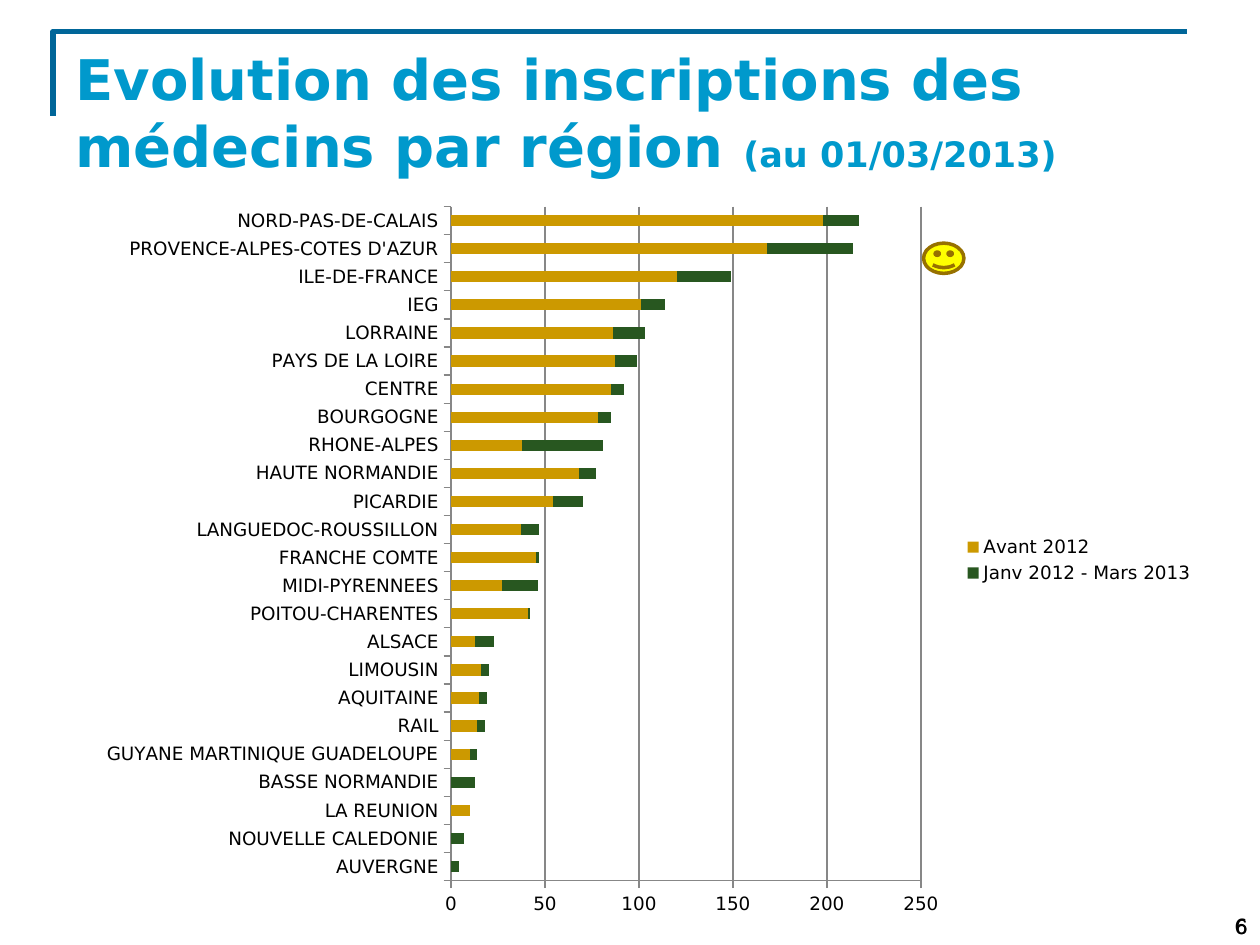
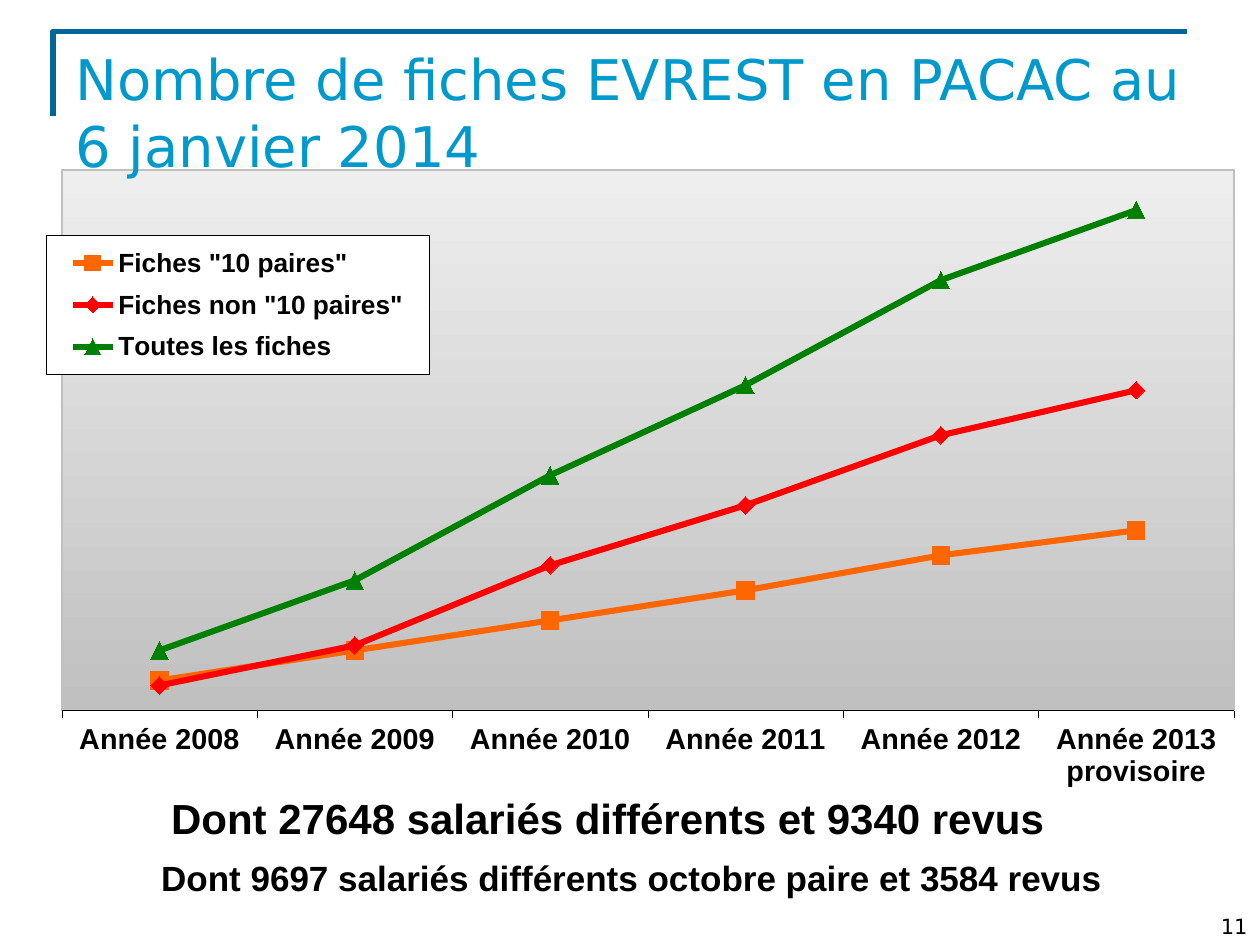
from lxml import etree
from pptx import Presentation
from pptx.chart.data import CategoryChartData
from pptx.dml.color import RGBColor
from pptx.enum.chart import (XL_CHART_TYPE, XL_LEGEND_POSITION,
                             XL_MARKER_STYLE, XL_TICK_MARK)
from pptx.enum.shapes import MSO_SHAPE
from pptx.enum.text import MSO_ANCHOR, PP_ALIGN
from pptx.oxml.ns import qn
from pptx.util import Pt

PX = 9144
BARS = XL_CHART_TYPE.BAR_STACKED
LINES = XL_CHART_TYPE.LINE_MARKERS
RIGHT = XL_LEGEND_POSITION.RIGHT
OUT, NONE = XL_TICK_MARK.OUTSIDE, XL_TICK_MARK.NONE
SQUARE = XL_MARKER_STYLE.SQUARE
DIAMOND = XL_MARKER_STYLE.DIAMOND
TRIANGLE = XL_MARKER_STYLE.TRIANGLE
SMILEY = MSO_SHAPE.SMILEY_FACE
TOP, BOTTOM = MSO_ANCHOR.TOP, MSO_ANCHOR.BOTTOM
LEFT, END = PP_ALIGN.LEFT, PP_ALIGN.RIGHT
SANS, ARIAL = "DejaVu Sans", "Arial"
BLACK, WHITE, GRAY, SILVER = "000000", "FFFFFF", "878787", "C0C0C0"
BLUE, NAVY = "0099CC", "006699"
NS = ('xmlns:c="http://schemas.openxmlformats.org/drawingml/2006/chart" '
      'xmlns:a="http://schemas.openxmlformats.org/drawingml/2006/main"')

REGIONS = [
    ("AUVERGNE", 0, 4), ("NOUVELLE CALEDONIE", 0, 7), ("LA REUNION", 10, 0),
    ("BASSE NORMANDIE", 0, 13), ("GUYANE MARTINIQUE GUADELOUPE", 10, 4),
    ("RAIL", 14, 4), ("AQUITAINE", 15, 4), ("LIMOUSIN", 16, 4),
    ("ALSACE", 13, 10), ("POITOU-CHARENTES", 41, 1),
    ("MIDI-PYRENNEES", 27, 19), ("FRANCHE COMTE", 45, 2),
    ("LANGUEDOC-ROUSSILLON", 37, 10), ("PICARDIE", 54, 16),
    ("HAUTE NORMANDIE", 68, 9), ("RHONE-ALPES", 38, 43),
    ("BOURGOGNE", 78, 7), ("CENTRE", 85, 7), ("PAYS DE LA LOIRE", 87, 12),
    ("LORRAINE", 86, 17), ("IEG", 101, 13), ("ILE-DE-FRANCE", 120, 29),
    ("PROVENCE-ALPES-COTES D'AZUR", 168, 46), ("NORD-PAS-DE-CALAIS", 198, 19),
]
YEARS = [f"Année {year}" for year in range(2008, 2013)]
YEARS.append("Année 2013 provisoire")
SHEETS = [
    ('Fiches "10 paires"', [6, 12, 18, 24, 31, 36], "FF6600", SQUARE),
    ('Fiches non "10 paires"', [5, 13, 29, 41, 55, 64], "FF0000", DIAMOND),
    ("Toutes les fiches", [12, 26, 47, 65, 86, 100], "008000", TRIANGLE),
]


def color(code):
    """Turn a hex string into a colour."""
    return RGBColor.from_string(code)


def style(font, face, size, code=BLACK, bold=False):
    """Set the format of a font."""
    font.name, font.size, font.bold = face, Pt(size), bold
    font.color.rgb = color(code)


def stroke(line, code, width):
    """Set the colour and width of a line."""
    line.color.rgb = color(code)
    line.width = Pt(width)


def place(box, frame, inner=False):
    """Make a chart layout that puts a part at a slide box."""
    left, top, wide, high = frame
    spots = {"x": (box[0] - left) / wide, "y": (box[1] - top) / high,
             "w": box[2] / wide, "h": box[3] / high}
    target = '<c:layoutTarget val="inner"/>' if inner else ""
    modes = "".join(f'<c:{k}Mode val="edge"/>' for k in "xy")
    sizes = "".join(f'<c:{k} val="{v:.4f}"/>' for k, v in spots.items())
    return etree.fromstring(
        f"<c:layout {NS}><c:manualLayout>{target}{modes}{sizes}"
        "</c:manualLayout></c:layout>")


def panel(fill, code, width):
    """Make the fill and border of a chart part."""
    return etree.fromstring(
        f'<c:spPr {NS}>{fill}<a:ln w="{Pt(width)}"><a:solidFill>'
        f'<a:srgbClr val="{code}"/></a:solidFill></a:ln></c:spPr>')


def solid(code):
    """Write a plain fill."""
    return f'<a:solidFill><a:srgbClr val="{code}"/></a:solidFill>'


def fade(*codes):
    """Write a fill that fades from top to bottom."""
    step = 100000 // (len(codes) - 1)
    stops = "".join(f'<a:gs pos="{i * step}"><a:srgbClr val="{code}"/></a:gs>'
                    for i, code in enumerate(codes))
    return (f"<a:gradFill><a:gsLst>{stops}</a:gsLst>"
            '<a:lin ang="5400000" scaled="0"/></a:gradFill>')


class Deck:
    """Hold the style and the current slide."""

    def __init__(self):
        """Start a deck of 10 by 7.5 inches."""
        self.file = Presentation()
        self.file.slide_width, self.file.slide_height = 1000 * PX, 750 * PX
        self.slide = None

    def page(self):
        """Add a slide with its corner rule."""
        self.slide = self.file.slides.add_slide(self.file.slide_layouts[6])
        pen = self.slide.shapes.build_freeform(42, 92, scale=PX)
        pen.add_line_segments([(42, 25), (942, 25)], close=False)
        rule = pen.convert_to_shape()
        rule.shadow.inherit = False
        rule.fill.background()
        stroke(rule.line, NAVY, 3)

    def text(self, box, *runs, face=ARIAL, code=BLACK, bold=False,
             align=LEFT, anchor=TOP):
        """Add a text box from pairs of words and size."""
        frame = self.slide.shapes.add_textbox(*(n * PX for n in box)).text_frame
        frame.word_wrap, frame.vertical_anchor = True, anchor
        para = frame.paragraphs[0]
        para.alignment = align
        for words, size in runs:
            run = para.add_run()
            run.text = words
            style(run.font, face, size, code, bold)

    def title(self, *runs, bold=False):
        """Add the slide title."""
        self.text((50, 30, 900, 125), *runs, face=SANS, code=BLUE, bold=bold)

    def number(self, num, face=SANS):
        """Add the page number."""
        self.text((767, 700, 233, 50), (num, 12), face=face, align=END,
                  anchor=BOTTOM)

    def shape(self, kind, box, fill, line, width):
        """Add a preset shape."""
        item = self.slide.shapes.add_shape(kind, *(n * PX for n in box))
        item.shadow.inherit = False
        item.fill.solid()
        item.fill.fore_color.rgb = color(fill)
        stroke(item.line, line, width)

    def chart(self, kind, box, plot, cats, rows, face, size):
        """Add a chart with a legend and a fixed plot area."""
        data = CategoryChartData()
        data.categories = cats
        for name, vals in rows:
            data.add_series(name, vals)
        chart = self.slide.shapes.add_chart(
            kind, *(n * PX for n in box), data).chart
        chart.has_title = False
        style(chart.font, face, size)
        chart.plots[0].vary_by_categories = False
        chart.has_legend = True
        chart.legend.position = RIGHT
        chart.legend.include_in_layout = False
        area = chart._chartSpace.chart.plotArea
        for old in area.findall(qn("c:layout")):
            area.remove(old)
        area.insert(0, place(plot, box, True))
        return chart

    def bars(self, box, plot, cats, rows, codes):
        """Add a stacked bar chart."""
        chart = self.chart(BARS, box, plot, cats, rows, SANS, 10)
        style(chart.legend.font, SANS, 10.5)
        bars = chart.plots[0]
        bars.gap_width, bars.overlap = 150, 100
        for row, code in zip(bars.series, codes):
            row.format.fill.solid()
            row.format.fill.fore_color.rgb = color(code)
        axis = chart.value_axis
        axis.minimum_scale, axis.maximum_scale, axis.major_unit = 0, 250, 50
        axis.has_major_gridlines = True
        stroke(axis.major_gridlines.format.line, GRAY, 0.75)
        for axis in (chart.category_axis, chart.value_axis):
            axis.major_tick_mark, axis.minor_tick_mark = OUT, NONE
            stroke(axis.format.line, GRAY, 0.75)
            style(axis.tick_labels.font, SANS, 10.5)

    def lines(self, box, plot, key, cats, rows):
        """Add a line chart on a shaded panel, with a framed legend."""
        chart = self.chart(LINES, box, plot, cats, [r[:2] for r in rows],
                           ARIAL, 11.7)
        for row, (_, _, code, mark) in zip(chart.plots[0].series, rows):
            row.smooth = False
            stroke(row.format.line, code, 3.5)
            row.marker.style, row.marker.size = mark, 10
            row.marker.format.fill.solid()
            row.marker.format.fill.fore_color.rgb = color(code)
            stroke(row.marker.format.line, code, 0.75)
        axis = chart.value_axis
        axis.minimum_scale, axis.maximum_scale = 0, 108
        axis.has_major_gridlines = False
        axis.tick_labels.number_format = "#,##0"
        axis.tick_labels.number_format_is_linked = False
        axis.visible = False
        axis = chart.category_axis
        axis.major_tick_mark, axis.minor_tick_mark = OUT, NONE
        stroke(axis.format.line, BLACK, 0.29)
        style(axis.tick_labels.font, ARIAL, 16.4, bold=True)
        style(chart.legend.font, ARIAL, 15, bold=True)
        area = chart._chartSpace.chart.plotArea
        area.append(panel(fade("EEEEEE", SILVER), SILVER, 1))
        legend = chart.legend._element
        over = legend.find(qn("c:overlay"))
        over.addprevious(place(key, box))
        over.addnext(panel(solid(WHITE), BLACK, 0.29))


def main():
    """Build both slides."""
    deck = Deck()

    deck.page()
    for face in (SANS, ARIAL):
        deck.number("6", face)
    deck.title(("Evolution des inscriptions des médecins par région ", 32),
               ("(au 01/03/2013)", 20), bold=True)
    names, before, since = zip(*REGIONS)
    deck.bars((67, 152, 891, 585), (358, 164, 373, 535), names,
              [("Avant 2012", before), ("Janv 2012 - Mars 2013", since)],
              ("CC9900", "285720"))
    deck.shape(SMILEY, (733, 193, 32, 24), "FFFF00", "977100", 2)

    deck.page()
    deck.text((126, 624, 816, 50),
              ("Dont 27648 salariés différents et 9340 revus", 24), bold=True)
    deck.lines((36, 121, 944, 508), (49, 135, 931, 429), (37, 187, 304, 110),
               YEARS, SHEETS)
    deck.text((118, 675, 882, 44),
              ("Dont 9697 salariés différents octobre paire et 3584 revus", 20),
              bold=True)
    deck.number("11")
    deck.title(("Nombre de fiches EVREST en PACAC au 6 janvier 2014", 32))

    deck.file.save("out.pptx")


if __name__ == "__main__":
    main()
